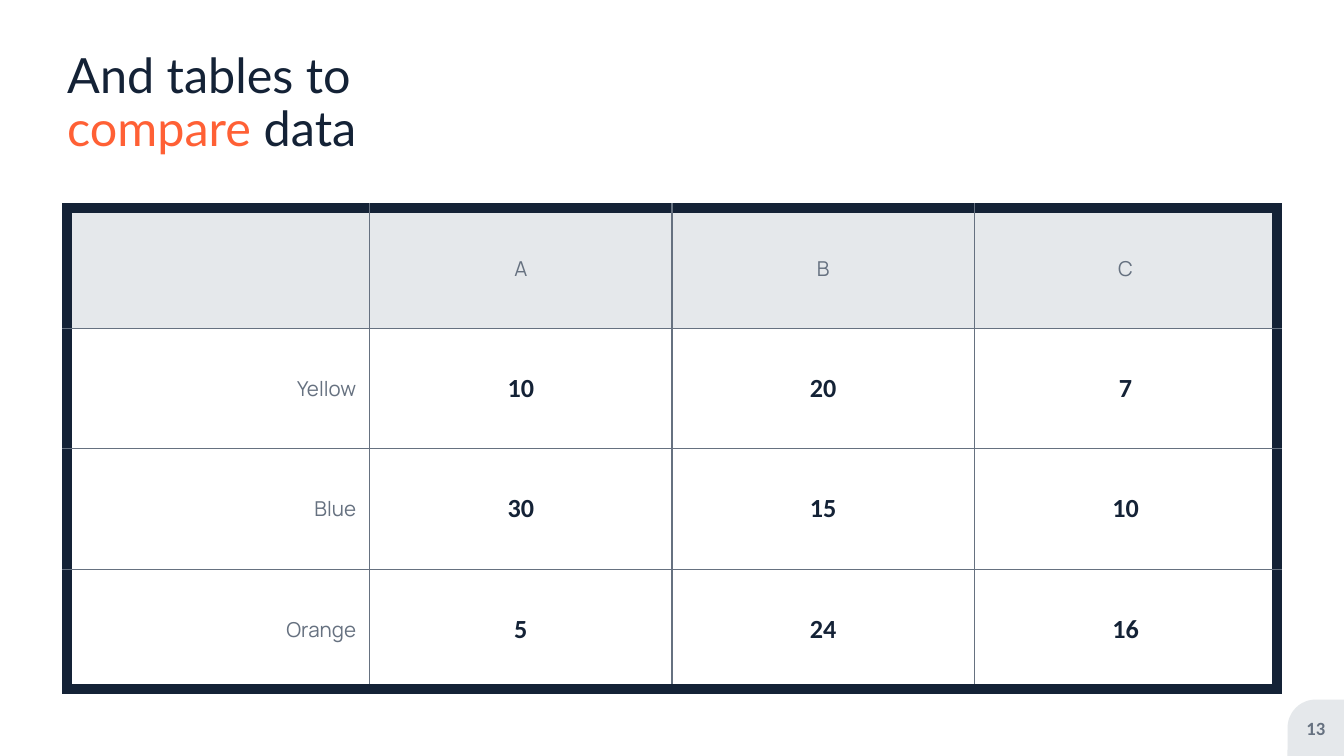
"""Build a slide with a bordered table that compares three colours."""
from lxml.etree import SubElement
from pptx import Presentation
from pptx.dml.color import RGBColor
from pptx.enum.shapes import MSO_SHAPE
from pptx.enum.text import MSO_ANCHOR, MSO_AUTO_SIZE, PP_ALIGN
from pptx.oxml.ns import qn
from pptx.util import Inches, Pt

NAVY = RGBColor(0x14, 0x22, 0x36)
ORANGE = RGBColor(0xFF, 0x60, 0x35)
SLATE = RGBColor(0x66, 0x71, 0x80)
MIST = RGBColor(0xE5, 0xE8, 0xEB)
WHITE = RGBColor(0xFF, 0xFF, 0xFF)

TITLE = [("And tables to ", NAVY), ("compare", ORANGE), (" data", NAVY)]
ROWS = [
    ["", "A", "B", "C"],
    ["Yellow", "10", "20", "7"],
    ["Blue", "30", "15", "10"],
    ["Orange", "5", "24", "16"],
]
PAGE_NUMBER = "13"
PAGE_WIDTH = Inches(10)
PAGE_HEIGHT = PAGE_WIDTH * 9 // 16
TABLE_AREA = [Inches(n) for n in (0.5, 1.55, 9, 3.58)]
CORNER_SIZE = Inches(0.42)
CORNER_AREA = (PAGE_WIDTH - CORNER_SIZE, PAGE_HEIGHT - CORNER_SIZE,
               CORNER_SIZE, CORNER_SIZE)
OUTER_WIDTH, INNER_WIDTH = Pt(6), Pt(0.75)


def set_font(font, name, size, color, bold=False):
    font.name, font.size, font.bold = name, Pt(size), bold
    font.color.rgb = color


def clear_frame(frame):
    frame.margin_left = frame.margin_right = 0
    frame.margin_top = frame.margin_bottom = 0
    frame.vertical_anchor = MSO_ANCHOR.MIDDLE
    frame.word_wrap = True
    frame.auto_size = MSO_AUTO_SIZE.NONE


def set_borders(cell, outer_sides):
    properties = cell._tc.get_or_add_tcPr()
    for index, side in enumerate(("lnL", "lnR", "lnT", "lnB")):
        outer = outer_sides[side]
        line = SubElement(properties, qn(f"a:{side}"))
        line.set("w", str(int(OUTER_WIDTH if outer else INNER_WIDTH)))
        fill = SubElement(line, qn("a:solidFill"))
        SubElement(fill, qn("a:srgbClr")).set("val", str(NAVY if outer else SLATE))
        properties.insert(index, line)


def add_title(page):
    title = page.shapes.title
    title.left, title.top = Inches(0.5), Inches(0)
    title.width, title.height = Inches(3.47), Inches(1.55)
    clear_frame(title.text_frame)
    para = title.text_frame.paragraphs[0]
    para.alignment = PP_ALIGN.LEFT
    para.line_spacing = 0.9
    for text, color in TITLE:
        span = para.add_run()
        span.text = text
        set_font(span.font, "Lato", 26, color)


def add_comparison(page):
    last_row, last_column = len(ROWS) - 1, len(ROWS[0]) - 1
    table = page.shapes.add_table(len(ROWS), len(ROWS[0]), *TABLE_AREA).table
    for r, values in enumerate(ROWS):
        for c, value in enumerate(values):
            cell = table.cell(r, c)
            cell.text = value
            cell.vertical_anchor = MSO_ANCHOR.MIDDLE
            cell.margin_top = cell.margin_bottom = Inches(0.07)
            cell.fill.solid()
            cell.fill.fore_color.rgb = MIST if r == 0 else WHITE
            set_borders(cell, {"lnL": c == 0, "lnR": c == last_column,
                               "lnT": r == 0, "lnB": r == last_row})
            para = cell.text_frame.paragraphs[0]
            para.alignment = PP_ALIGN.RIGHT if c == 0 else PP_ALIGN.CENTER
            if r == 0 or c == 0:
                set_font(para.font, "Manrope", 11, SLATE)
            else:
                set_font(para.font, "Calibri", 14, NAVY, True)


def add_page_number(page):
    corner = page.shapes.add_shape(MSO_SHAPE.ROUND_1_RECTANGLE, *CORNER_AREA)
    corner.adjustments[0] = 0.5
    corner.shadow.inherit = False
    corner.fill.solid()
    corner.fill.fore_color.rgb = MIST
    corner.line.fill.background()
    corner._element.spPr.xfrm.set("flipH", "1")

    box = page.shapes.add_textbox(*CORNER_AREA)
    clear_frame(box.text_frame)
    para = box.text_frame.paragraphs[0]
    para.text = PAGE_NUMBER
    para.alignment = PP_ALIGN.CENTER
    set_font(para.font, "Calibri", 10, SLATE, True)


def main():
    deck = Presentation()
    deck.slide_width, deck.slide_height = PAGE_WIDTH, PAGE_HEIGHT
    page = deck.slides.add_slide(deck.slide_layouts[5])
    add_title(page)
    add_comparison(page)
    add_page_number(page)
    deck.save("out.pptx")


if __name__ == "__main__":
    main()
